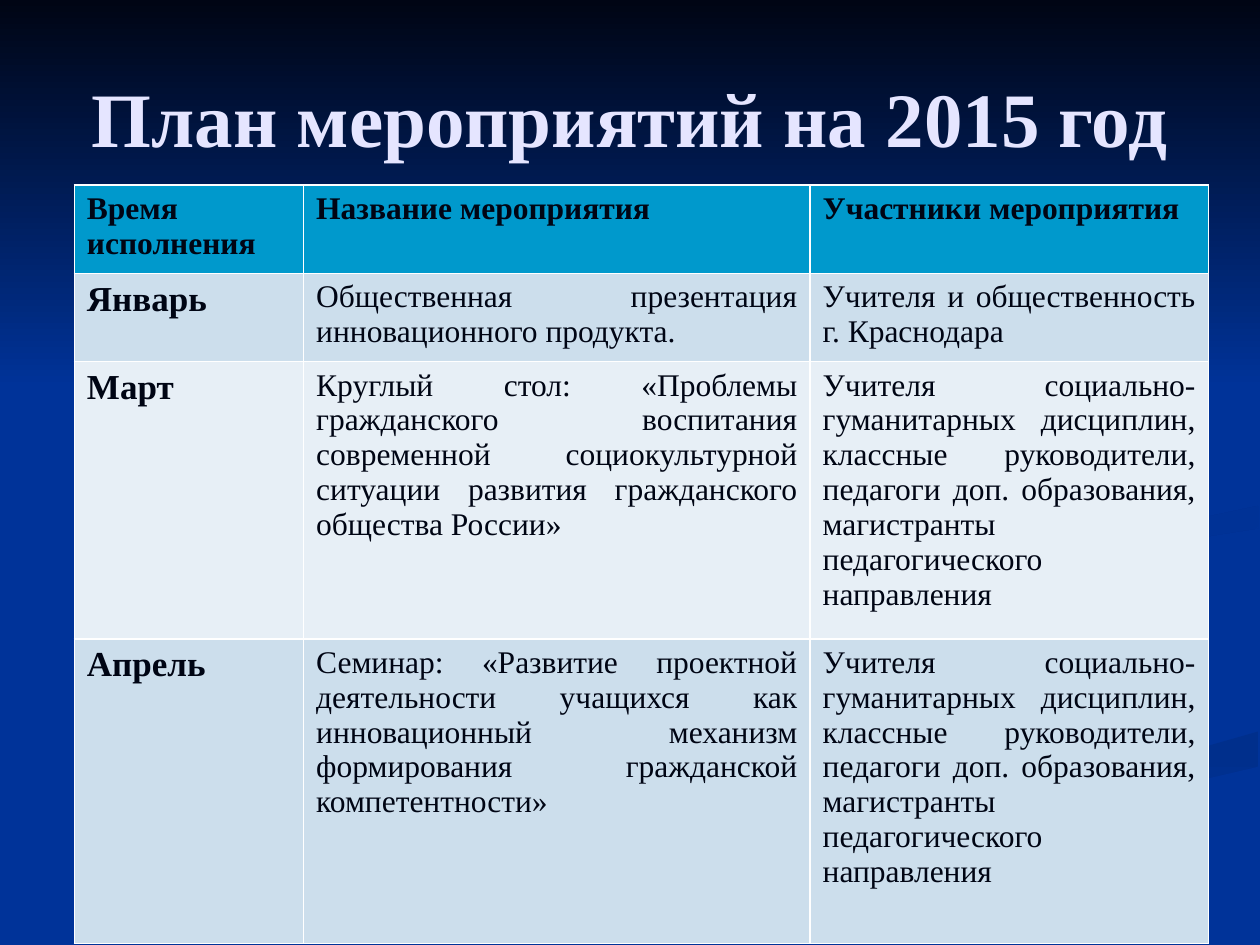
from lxml.etree import SubElement
from pptx import Presentation
from pptx.dml.color import RGBColor
from pptx.enum.shapes import MSO_SHAPE
from pptx.enum.text import MSO_ANCHOR, PP_ALIGN
from pptx.oxml.ns import qn
from pptx.util import Pt

FONT = "Times New Roman"
COLORS = {
    "background": "003399",
    "night": "000514",
    "wide_ribbon": "002F8C",
    "thin_ribbon": "003091",
    "title": "E5E5FF",
    "text": "000514",
    "header": "0099CC",
    "odd_row": "CCDEEC",
    "even_row": "E7EFF6",
    "border": "FFFFFF",
}
WIDE_RIBBON = [
    (362, 539), (411, 539), (432, 528), (467, 511), (520, 491), (591, 469),
    (650, 454), (719, 438), (719, 418), (684, 428), (650, 439), (598, 453),
    (550, 466), (477, 490), (431, 508), (374, 538),
]
THIN_RIBBON = [
    (562, 331), (563, 338), (574, 348), (595, 357), (580, 346), (580, 340),
    (585, 333), (607, 323), (645, 313), (687, 307), (719, 302), (719, 289),
    (672, 299), (623, 305), (591, 312), (570, 322),
]
TEACHERS = (
    "Учителя социально-гуманитарных дисциплин, классные руководители, "
    "педагоги доп. образования, магистранты педагогического направления"
)
PLAN = [
    ("Время исполнения", "Название мероприятия", "Участники мероприятия"),
    ("Январь", "Общественная презентация инновационного продукта.",
     "Учителя и общественность г. Краснодара"),
    ("Март", "Круглый стол: «Проблемы гражданского воспитания современной "
     "социокультурной ситуации развития гражданского общества России»", TEACHERS),
    ("Апрель", "Семинар: «Развитие проектной деятельности учащихся как "
     "инновационный механизм формирования гражданской компетентности»", TEACHERS),
]
COLUMN_WIDTHS = [131.04, 289.44, 227.52]
ROW_HEIGHTS = [50.4, 50.4, 158.4, 174.24]


def color(name):
    """Return the named colour."""
    return RGBColor.from_string(COLORS[name])


def style_font(font, size, color_name, bold):
    """Set the face, size, colour and weight of a font."""
    font.name, font.size, font.bold = FONT, Pt(size), bold
    font.color.rgb = color(color_name)


def fade_to_background(shape, start, angle):
    """Fill a borderless shape with a gradient that ends in the background colour."""
    shape.shadow.inherit = False
    shape.line.fill.background()
    shape.fill.gradient()
    shape.fill.gradient_angle = angle
    for stop, name in zip(shape.fill.gradient_stops, (start, "background")):
        stop.color.rgb = color(name)


def add_ribbon(slide, outline, start, angle):
    """Draw a curved ribbon from its outline in points."""
    first, *rest = [(Pt(x), Pt(y)) for x, y in outline]
    builder = slide.shapes.build_freeform(*first)
    builder.add_line_segments(rest)
    fade_to_background(builder.convert_to_shape(), start, angle)


def add_backdrop(slide):
    """Paint the background, its ribbons and the dark fade at the top."""
    slide.background.fill.solid()
    slide.background.fill.fore_color.rgb = color("background")
    add_ribbon(slide, WIDE_RIBBON, "wide_ribbon", 270)
    add_ribbon(slide, THIN_RIBBON, "thin_ribbon", 315)
    sky = slide.shapes.add_shape(MSO_SHAPE.RECTANGLE, 0, 0, Pt(720), Pt(221.76))
    fade_to_background(sky, "night", 270)


def set_title(slide, text):
    """Bring the slide title in front of the backdrop, place and format it."""
    title = slide.shapes.title
    slide.shapes._spTree.append(title._element)
    title.left, title.top, title.width, title.height = Pt(36), Pt(21.6), Pt(648), Pt(90)
    frame = title.text_frame
    frame.text = text
    frame.word_wrap = True
    frame.vertical_anchor = MSO_ANCHOR.MIDDLE
    heading = frame.paragraphs[0]
    heading.alignment = PP_ALIGN.CENTER
    style_font(heading.font, 44, "title", True)


def set_borders(cell):
    """Give a cell a thin line on all four sides."""
    properties = cell._tc.get_or_add_tcPr()
    for side in ("lnL", "lnR", "lnT", "lnB"):
        line = SubElement(properties, qn(f"a:{side}"), w=str(Pt(1)))
        fill = SubElement(line, qn("a:solidFill"))
        SubElement(fill, qn("a:srgbClr"), val=COLORS["border"])


def fill_cell(cell, text, row, column):
    """Write and format one cell according to its place in the plan."""
    set_borders(cell)
    cell.fill.solid()
    row_color = "header" if row == 0 else "odd_row" if row % 2 else "even_row"
    cell.fill.fore_color.rgb = color(row_color)
    cell.text = text
    entry = cell.text_frame.paragraphs[0]
    is_month = row > 0 and column == 0
    is_detail = row > 0 and column > 0
    entry.alignment = PP_ALIGN.JUSTIFY if is_detail else PP_ALIGN.LEFT
    style_font(entry.font, 20 if is_month else 18, "text", not is_detail)


def add_plan(slide):
    """Add the table of events."""
    plan = slide.shapes.add_table(
        len(PLAN), len(COLUMN_WIDTHS), Pt(42.48), Pt(105.84),
        Pt(sum(COLUMN_WIDTHS)), Pt(sum(ROW_HEIGHTS)),
    ).table
    for column, width in zip(plan.columns, COLUMN_WIDTHS):
        column.width = Pt(width)
    for row, height in zip(plan.rows, ROW_HEIGHTS):
        row.height = Pt(height)
    for row, texts in enumerate(PLAN):
        for column, text in enumerate(texts):
            fill_cell(plan.cell(row, column), text, row, column)


def main():
    """Build the slide and save it."""
    deck = Presentation()
    deck.slide_width, deck.slide_height = Pt(720), Pt(540)
    slide = deck.slides.add_slide(deck.slide_layouts.get_by_name("Title Only"))
    add_backdrop(slide)
    set_title(slide, "План мероприятий на 2015 год")
    add_plan(slide)
    deck.save("out.pptx")


if __name__ == "__main__":
    main()
